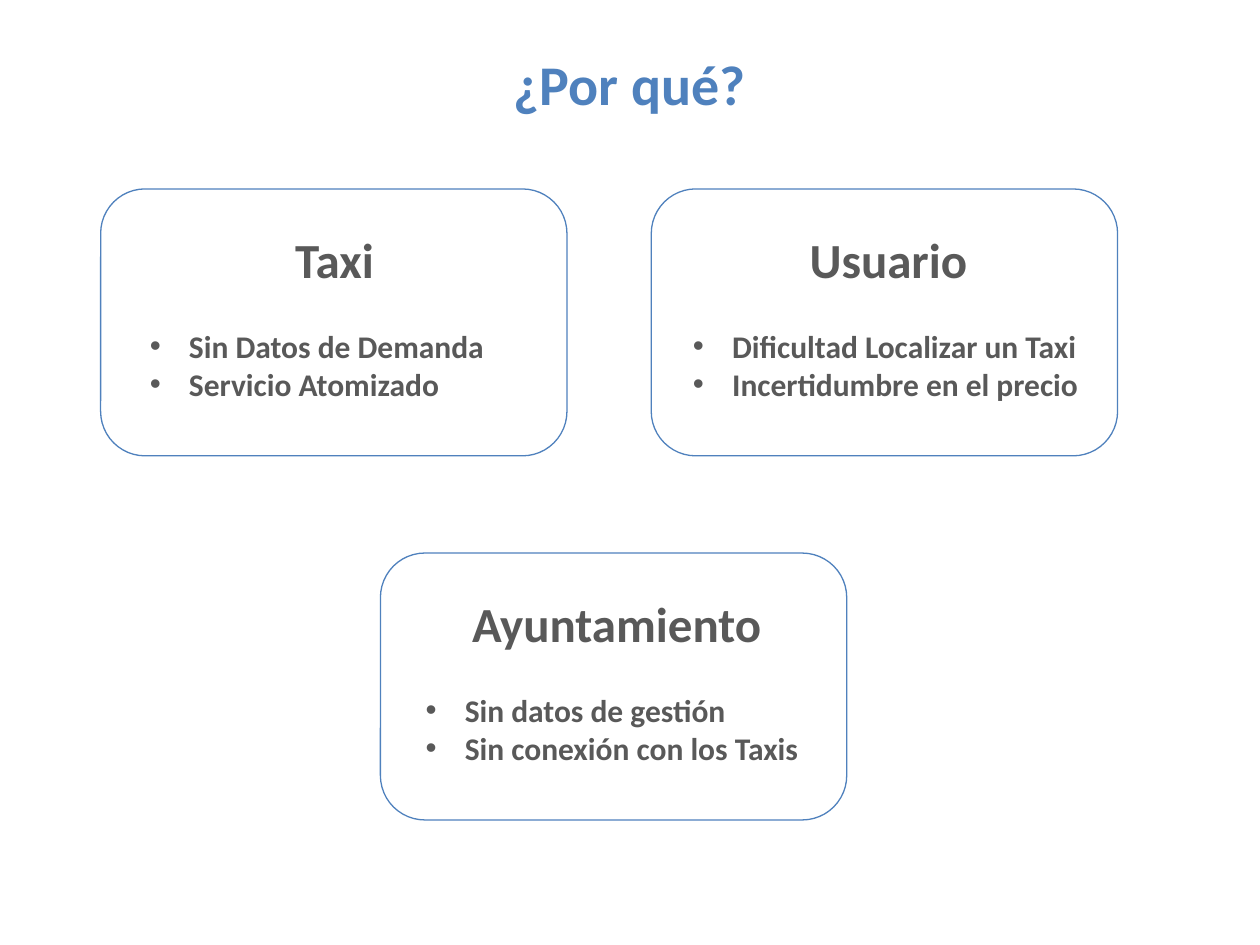
from lxml import etree
from pptx import Presentation
from pptx.dml.color import RGBColor
from pptx.enum.shapes import MSO_SHAPE
from pptx.enum.text import MSO_ANCHOR, PP_ALIGN
from pptx.oxml.ns import qn
from pptx.util import Cm, Pt

ROUNDED = MSO_SHAPE.ROUNDED_RECTANGLE
MIDDLE = MSO_ANCHOR.MIDDLE
CENTER, LEFT = PP_ALIGN.CENTER, PP_ALIGN.LEFT
BLUE = RGBColor(0x4F, 0x81, 0xBD)
GREY = RGBColor(0x59, 0x59, 0x59)

CARD_W, CARD_H = 9.4, 5.38
TEXT_DROP, TEXT_H = 0.69, 3.76
TOP_ROW, BOTTOM_ROW = 3.81, 11.15

# Card left and top, text left and width, heading, bullets
CARDS = [
    (2.03, TOP_ROW, 2.77, 7.95, "Taxi",
     ["Sin Datos de Demanda", "Servicio Atomizado"]),
    (13.13, TOP_ROW, 13.72, 8.38, "Usuario",
     ["Dificultad Localizar un Taxi", "Incertidumbre en el precio"]),
    (7.67, BOTTOM_ROW, 8.33, 8.2, "Ayuntamiento",
     ["Sin datos de gestión", "Sin conexión con los Taxis"]),
]


def write(p, text, size, color, align):
    p.text = text
    p.alignment = align
    p.font.name = "Calibri"
    p.font.size = Pt(size)
    p.font.bold = True
    p.font.color.rgb = color


def add_bullet(p):
    pPr = p._p.get_or_add_pPr()
    pPr.set("marL", str(Cm(0.79)))
    pPr.set("indent", str(Cm(-0.79)))
    font = etree.Element(qn("a:buFont"), typeface="Arial")
    char = etree.Element(qn("a:buChar"), char="•")
    # Bullet settings come before the default run properties
    pPr.find(qn("a:defRPr")).addprevious(font)
    font.addnext(char)


prs = Presentation()
prs.slide_width, prs.slide_height = Cm(25.4), Cm(19.05)
s = prs.slides.add_slide(prs.slide_layouts[6])

# Title
tf = s.shapes.add_textbox(Cm(1.27), Cm(0.08), Cm(22.86), Cm(3.18)).text_frame
tf.word_wrap = True
tf.vertical_anchor = MIDDLE
write(tf.paragraphs[0], "¿Por qué?", 32, BLUE, CENTER)

# Cards with heading and bullets
for left, top, text_left, text_w, heading, bullets in CARDS:
    sp = s.shapes.add_shape(ROUNDED, Cm(left), Cm(top), Cm(CARD_W), Cm(CARD_H))
    sp.shadow.inherit = False
    sp.fill.background()
    sp.line.color.rgb = BLUE
    sp.line.width = Pt(0.75)

    tf = s.shapes.add_textbox(Cm(text_left), Cm(top + TEXT_DROP),
                              Cm(text_w), Cm(TEXT_H)).text_frame
    tf.word_wrap = True
    p = tf.paragraphs[0]
    write(p, heading, 28, GREY, CENTER)
    p.space_after = Pt(22)
    for bullet in bullets:
        p = tf.add_paragraph()
        write(p, bullet, 18, GREY, LEFT)
        add_bullet(p)

prs.save("out.pptx")
